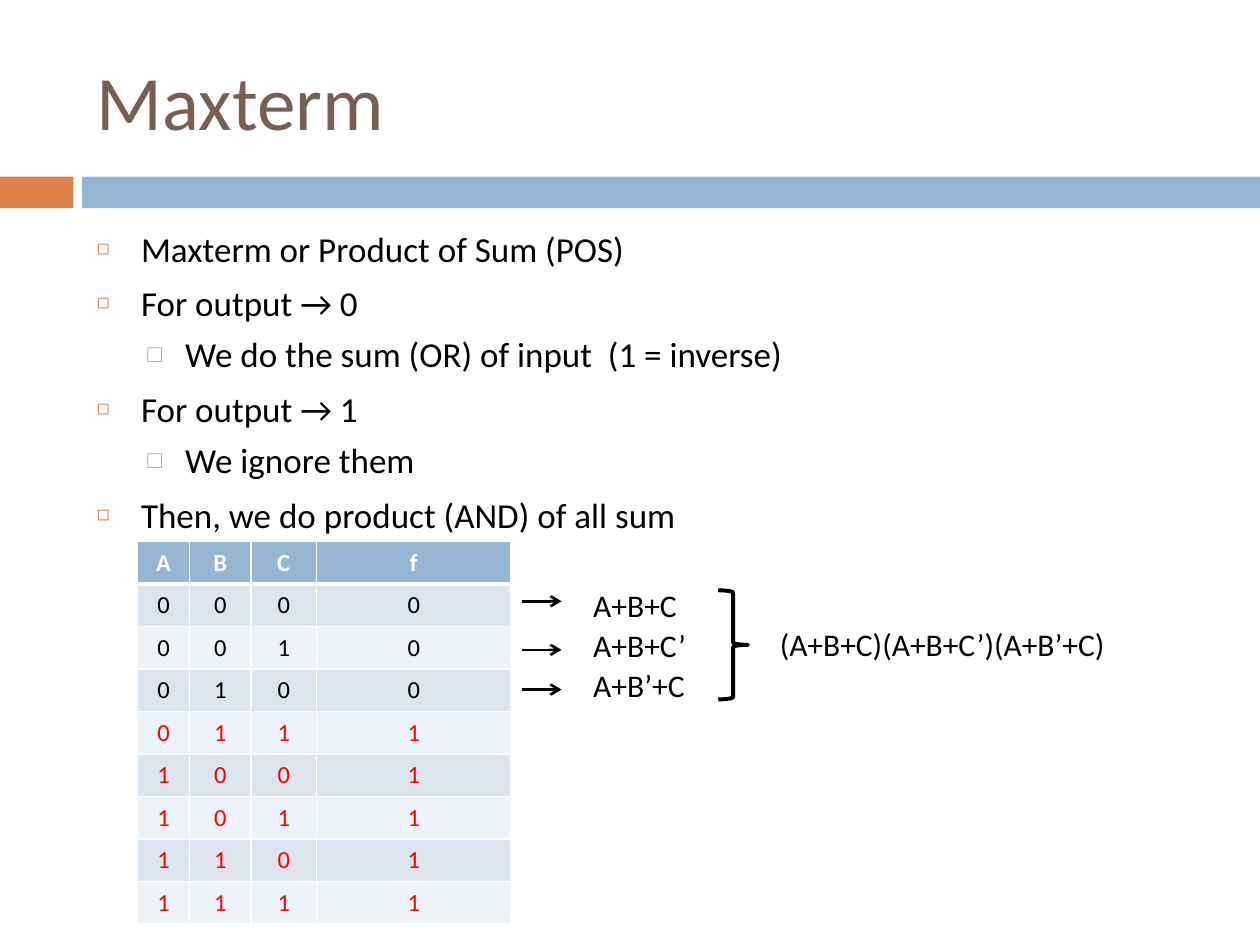
from itertools import product

from lxml import etree
from pptx import Presentation
from pptx import util as u
from pptx.dml.color import RGBColor
from pptx.enum import shapes, text
from pptx.oxml import ns

BLACK = RGBColor(0x00, 0x00, 0x00)
WHITE = RGBColor(0xFF, 0xFF, 0xFF)
RED = RGBColor(0xFF, 0x00, 0x00)
BROWN = RGBColor(0x77, 0x5F, 0x55)
ORANGE = RGBColor(0xDD, 0x80, 0x47)
BLUE = RGBColor(0x94, 0xB6, 0xD2)
BAND_DARK = RGBColor(0xDC, 0xE5, 0xEE)
BAND_LIGHT = RGBColor(0xEE, 0xF3, 0xF7)

BULLETS = [
    ("◻", ORANGE, 60, 0.35, -0.35, 7),
    ("□", BLUE, 70, 0.7, -0.3, 5.5),
]
POINTS = [
    (0, "Maxterm or Product of Sum (POS)"),
    (0, "For output → 0"),
    (1, "We do the sum (OR) of input  (1 = inverse)"),
    (0, "For output → 1"),
    (1, "We ignore them"),
    (0, "Then, we do product (AND) of all sum"),
]
SUMS = ["A+B+C", "A+B+C’", "A+B’+C"]
ARROW_TOPS = [12.12, 13.1, 13.9]


def add(parent, tag, **attrs):
    return etree.SubElement(parent, ns.qn(tag), attrs)


class Slide:
    font = "Calibri"

    def __init__(self, s):
        self.s = s

    def style(self, p, size, color, bold=False):
        p.font.name, p.font.size, p.font.bold = self.font, u.Pt(size), bold
        p.font.color.rgb = color

    def place(self, sp, left, top, width, height):
        sp.left, sp.top = u.Cm(left), u.Cm(top)
        sp.width, sp.height = u.Cm(width), u.Cm(height)

    def title(self, words, *box):
        sp = self.s.shapes.title
        self.place(sp, *box)
        tf = sp.text_frame
        tf.text = words
        tf.auto_size = text.MSO_AUTO_SIZE.NONE
        tf.vertical_anchor = text.MSO_ANCHOR.MIDDLE
        tf.paragraphs[0].alignment = text.PP_ALIGN.LEFT
        self.style(tf.paragraphs[0], 44, BROWN)

    def bullets(self, points, *box):
        sp = self.s.placeholders[1]
        self.place(sp, *box)
        tf = sp.text_frame
        tf.text = "\n".join(words for _, words in points)
        tf.auto_size = text.MSO_AUTO_SIZE.NONE
        for p, (level, _) in zip(tf.paragraphs, points):
            char, color, percent, margin, indent, before = BULLETS[level]
            p.level = level
            p.space_before = u.Pt(before)
            pPr = p._p.get_or_add_pPr()
            pPr.set("marL", str(u.Inches(margin)))
            pPr.set("indent", str(u.Inches(indent)))
            add(add(pPr, "a:buClr"), "a:srgbClr", val=str(color))
            add(pPr, "a:buSzPct", val=str(percent * 1000))
            add(pPr, "a:buChar", char=char)
            self.style(p, 20, BLACK)

    def bar(self, color, *box):
        sp = self.s.shapes.add_shape(shapes.MSO_SHAPE.RECTANGLE, *map(u.Cm, box))
        sp.shadow.inherit = False
        sp.fill.solid()
        sp.fill.fore_color.rgb = color
        sp.line.fill.background()

    def brace(self, *box):
        sp = self.s.shapes.add_shape(shapes.MSO_SHAPE.RIGHT_BRACE, *map(u.Cm, box))
        sp.shadow.inherit = False
        sp.fill.background()
        sp.line.color.rgb = BLACK
        sp.line.width = u.Pt(2.25)

    def arrow(self, left, top, length):
        line = self.s.shapes.add_connector(
            shapes.MSO_CONNECTOR.STRAIGHT,
            u.Cm(left), u.Cm(top), u.Cm(left + length), u.Cm(top))
        line.line.color.rgb = BLACK
        line.line.width = u.Pt(1.5)
        add(line.line._get_or_add_ln(), "a:tailEnd", type="arrow")
        add(line._element.spPr, "a:effectLst")

    def label(self, words, *box):
        sp = self.s.shapes.add_textbox(*map(u.Cm, box))
        tf = sp.text_frame
        tf.text = words
        tf.word_wrap = False
        tf.auto_size = text.MSO_AUTO_SIZE.SHAPE_TO_FIT_TEXT
        self.style(tf.paragraphs[0], 18, BLACK)

    def cell(self, cell, words, color, fill, header):
        cell.text = words
        p = cell.text_frame.paragraphs[0]
        p.alignment = text.PP_ALIGN.CENTER
        self.style(p, 14, color, header)
        tcPr = cell._tc.get_or_add_tcPr()
        for side in "LRTB":
            width = 3 if header and side == "B" else 1
            ln = add(tcPr, f"a:ln{side}", w=str(u.Pt(width)))
            add(add(ln, "a:solidFill"), "a:srgbClr", val=str(WHITE))
        cell.fill.solid()
        cell.fill.fore_color.rgb = fill

    def table(self, rows, left, top, widths, row_height):
        box = (left, top, sum(widths), row_height * len(rows))
        table = self.s.shapes.add_table(
            len(rows), len(widths), *map(u.Cm, box)).table
        for column, width in zip(table.columns, widths):
            column.width = u.Cm(width)
        for i, row in enumerate(rows):
            table.rows[i].height = u.Cm(row_height)
            header = i == 0
            fill = BLUE if header else BAND_DARK if i % 2 else BAND_LIGHT
            color = WHITE if header else RED if row[-1] == "1" else BLACK
            for j, words in enumerate(row):
                self.cell(table.cell(i, j), words, color, fill, header)


def main():
    prs = Presentation()
    prs.slide_width, prs.slide_height = u.Cm(25.4), u.Cm(19.05)
    s = Slide(prs.slides.add_slide(prs.slide_layouts[1]))

    s.bar(ORANGE, 0, 3.56, 1.48, 0.64)
    s.bar(BLUE, 1.65, 3.56, 23.75, 0.64)
    s.title("Maxterm", 1.7, 0.64, 22.66, 2.74)
    s.bullets(POINTS, 1.7, 4.45, 22.66, 12.5)

    rows = [tuple("ABCf")]
    for i, bits in enumerate(product("01", repeat=3)):
        rows.append((*bits, "0" if i < len(SUMS) else "1"))
    s.table(rows, 2.77, 10.92, [1.05, 1.24, 1.32, 3.92], 0.85)

    for i, (words, top) in enumerate(zip(SUMS, ARROW_TOPS)):
        s.arrow(10.52, top, 0.8)
        s.label(words, 11.71, 11.68 + 0.81 * i, 2.6, 1.02)
    s.brace(14.48, 11.9, 0.6, 2.2)
    s.label("(A+B+C)(A+B+C’)(A+B’+C)", 15.47, 12.48, 7.7, 1.02)

    prs.save("out.pptx")


if __name__ == "__main__":
    main()
